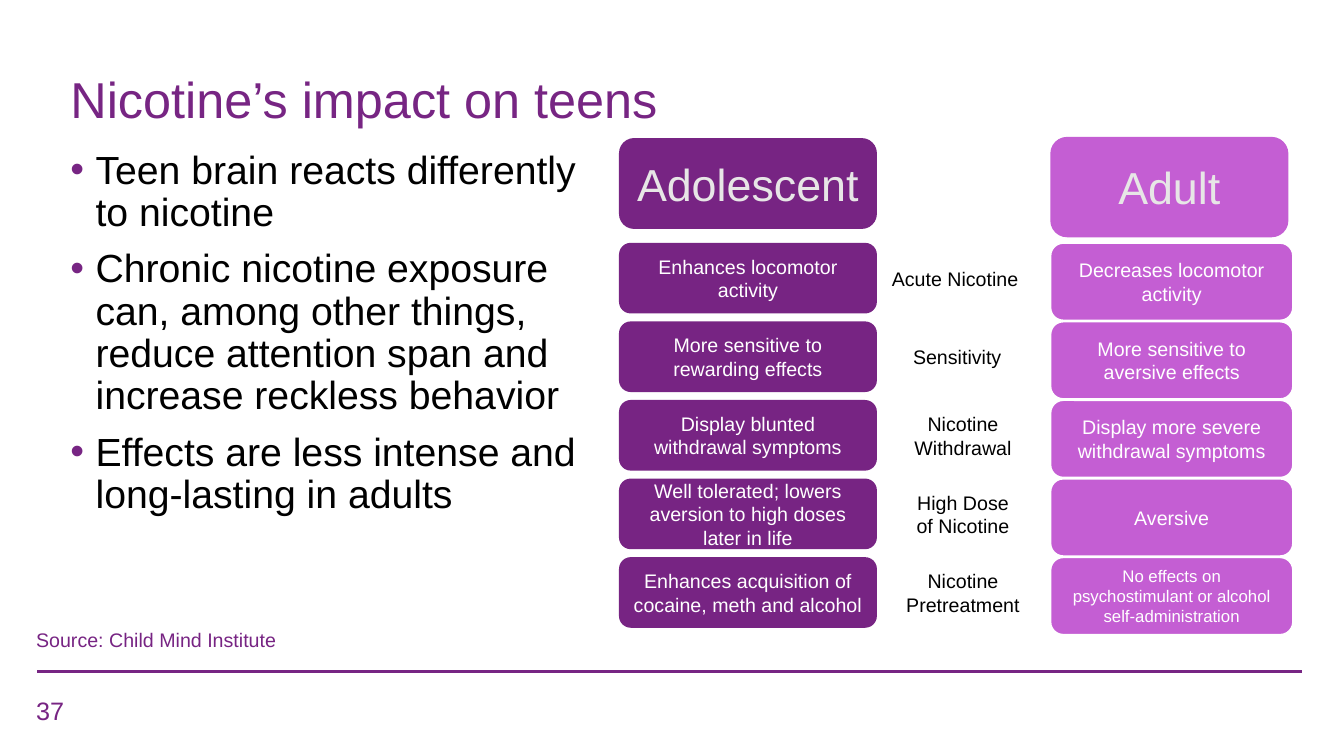
from dataclasses import dataclass

from lxml import etree
from pptx import Presentation
from pptx.dml.color import RGBColor
from pptx.enum import shapes as kinds, text as txt
from pptx.oxml import ns
from pptx.slide import Slide
from pptx.text.text import TextFrame
from pptx.util import Cm, Pt

PURPLE = RGBColor(0x77, 0x24, 0x83)
RULE = RGBColor(0x77, 0x25, 0x83)
ORCHID = RGBColor(0xC4, 0x5E, 0xD3)
PALE = RGBColor(0xE7, 0xE6, 0xE6)
WHITE = RGBColor(0xFF, 0xFF, 0xFF)
BLACK = RGBColor(0, 0, 0)
FONT = "Arial"

# Grid of the comparison, in centimetres
TOP, STEP = 6.12, 1.98
TEEN_X, ADULT_X, MID_X = 15.6, 26.47, 24.27
LEFT, CENTER = txt.PP_ALIGN.LEFT, txt.PP_ALIGN.CENTER


@dataclass
class Box:
    x: float
    y: float
    w: float
    h: float


@dataclass
class Style:
    size: float
    color: RGBColor
    align: txt.PP_ALIGN = LEFT


@dataclass
class Row:
    teen: str
    label: list[str]
    width: float
    adult: str
    size: float = 14


ROWS = [
    Row("Enhances locomotor activity", ["Acute Nicotine"], 4.09,
        "Decreases locomotor activity"),
    Row("More sensitive to rewarding effects", ["Sensitivity"], 3.02,
        "More sensitive to aversive effects"),
    Row("Display blunted withdrawal symptoms", ["Nicotine", "Withdrawal"], 3.28,
        "Display more severe withdrawal symptoms"),
    Row("Well tolerated; lowers aversion to high doses later in life",
        ["High Dose", "of Nicotine"], 3.12, "Aversive"),
    Row("Enhances acquisition of cocaine, meth and alcohol",
        ["Nicotine", "Pretreatment"], 3.73,
        "No effects on psychostimulant or alcohol self-administration", 12),
]
POINTS = [
    "Teen brain reacts differently to nicotine",
    "Chronic nicotine exposure can, among other things, reduce attention span "
    "and increase reckless behavior",
    "Effects are less intense and long-lasting in adults",
]


def place(box: Box) -> tuple[Cm, Cm, Cm, Cm]:
    return Cm(box.x), Cm(box.y), Cm(box.w), Cm(box.h)


def write(frame: TextFrame, lines: list[str], style: Style) -> None:
    for i, line in enumerate(lines):
        para = frame.add_paragraph() if i else frame.paragraphs[0]
        para.alignment = style.align
        run = para.add_run()
        run.text = line
        run.font.name = FONT
        run.font.size = Pt(style.size)
        run.font.color.rgb = style.color


def fill_holder(holder, box: Box, lines: list[str], style: Style) -> TextFrame:
    holder.left, holder.top, holder.width, holder.height = place(box)
    frame = holder.text_frame
    frame.auto_size = txt.MSO_AUTO_SIZE.NONE
    write(frame, lines, style)
    for para in frame.paragraphs:
        para.line_spacing = 0.9
    return frame


def add_bullets(frame: TextFrame) -> None:
    for i, para in enumerate(frame.paragraphs):
        para.space_before = Pt(10 if i else 0)
        props = para._p.get_or_add_pPr()
        props.set("marL", str(Cm(0.635)))
        props.set("indent", str(-Cm(0.635)))
        tint = etree.SubElement(props, ns.qn("a:buClr"))
        etree.SubElement(tint, ns.qn("a:srgbClr"), val=str(RULE))
        etree.SubElement(props, ns.qn("a:buFont"), typeface=FONT)
        etree.SubElement(props, ns.qn("a:buChar"), char="•")


def add_label(slide: Slide, box: Box, lines: list[str], style: Style) -> None:
    frame = slide.shapes.add_textbox(*place(box)).text_frame
    frame.word_wrap = True
    write(frame, lines, style)


def add_card(slide: Slide, box: Box, line: str, fill: RGBColor,
             style: Style, edge: bool = False) -> None:
    card = slide.shapes.add_shape(
        kinds.MSO_SHAPE.ROUNDED_RECTANGLE, *place(box))
    card.shadow.inherit = False
    card.fill.solid()
    card.fill.fore_color.rgb = fill
    if edge:
        card.line.color.rgb = WHITE
        card.line.width = Pt(1.5)
    else:
        card.line.fill.background()
    frame = card.text_frame
    frame.word_wrap = True
    frame.vertical_anchor = txt.MSO_ANCHOR.MIDDLE
    write(frame, [line], style)


def add_rule(slide: Slide) -> None:
    rule = slide.shapes.add_connector(
        kinds.MSO_CONNECTOR.STRAIGHT, Cm(0.94), Cm(16.92), Cm(32.82), Cm(16.92))
    rule.line.color.rgb = RULE
    rule.line.width = Pt(2.25)
    etree.SubElement(rule._element.spPr, ns.qn("a:effectLst"))


def main() -> None:
    deck = Presentation()
    deck.slide_width, deck.slide_height = Cm(33.87), Cm(19.05)
    slide = deck.slides.add_slide(deck.slide_layouts[1])
    add_rule(slide)

    # Title and bullet list
    title = fill_holder(slide.shapes.title, Box(1.52, 0, 30.63, 3.38),
                        ["Nicotine’s impact on teens"], Style(36, RULE))
    title.vertical_anchor = txt.MSO_ANCHOR.BOTTOM
    body = fill_holder(slide.placeholders[1], Box(1.52, 3.66, 13.54, 13.49),
                       POINTS, Style(28, BLACK))
    add_bullets(body)

    # Column heads
    head = Style(32, PALE, CENTER)
    add_card(slide, Box(TEEN_X, 3.48, 6.5, 2.29), "Adolescent", PURPLE, head)
    add_card(slide, Box(ADULT_X, 3.45, 6, 2.53), "Adult", ORCHID, head)

    # Comparison rows
    for i, row in enumerate(ROWS):
        y = TOP + i * STEP
        tall = 0.86 if len(row.label) == 1 else 1.45
        align = LEFT if len(row.label) == 1 else CENTER
        add_card(slide, Box(TEEN_X, y, 6.5, 1.78), row.teen, PURPLE,
                 Style(14, WHITE, CENTER))
        add_label(slide, Box(MID_X - row.width / 2, y + 0.9 - tall / 2,
                             row.width, tall),
                  row.label, Style(14, BLACK, align))
        add_card(slide, Box(ADULT_X, y, 6.12, 1.96), row.adult, ORCHID,
                 Style(row.size, WHITE, CENTER), edge=True)

    # Source and page number
    add_label(slide, Box(0.66, 15.7, 6.9, 0.86),
              ["Source: Child Mind Institute"], Style(14, PURPLE))
    add_label(slide, Box(0.66, 17.4, 7.62, 1.02), ["37"], Style(18, PURPLE))

    deck.save("out.pptx")


if __name__ == "__main__":
    main()
